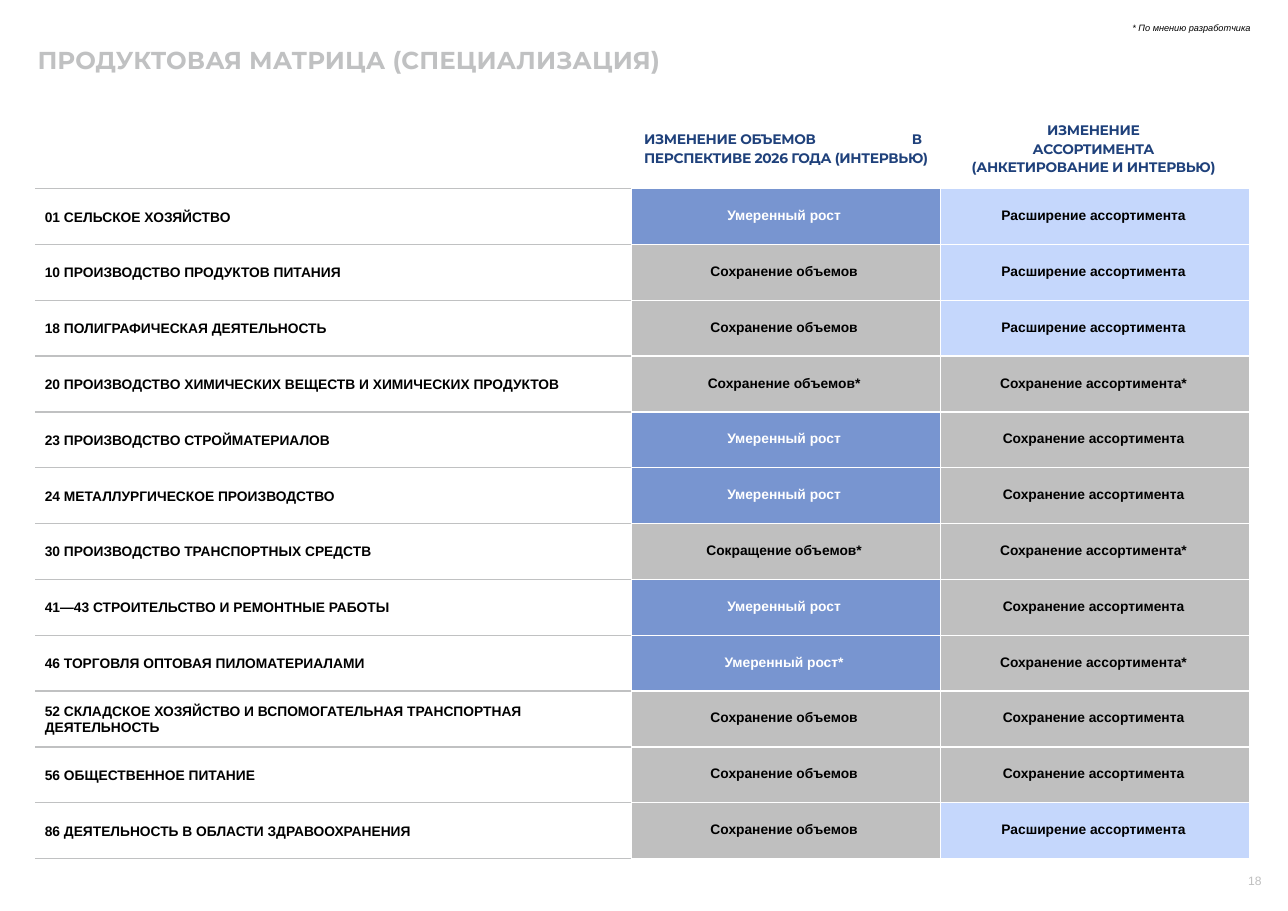
from lxml.etree import SubElement
from pptx import Presentation
from pptx.dml.color import RGBColor
from pptx.enum.text import MSO_ANCHOR, MSO_AUTO_SIZE, PP_ALIGN
from pptx.oxml.ns import qn
from pptx.util import Pt

TITLE = "ПРОДУКТОВАЯ МАТРИЦА (СПЕЦИАЛИЗАЦИЯ)"
FOOTNOTE = "* По мнению разработчика"
PAGE_NUMBER = "18"
VOLUME_HEADER = ["ИЗМЕНЕНИЕ ОБЪЕМОВ\tВ ПЕРСПЕКТИВЕ 2026 ГОДА (ИНТЕРВЬЮ)"]
RANGE_HEADER = ["ИЗМЕНЕНИЕ", "АССОРТИМЕНТА", "(АНКЕТИРОВАНИЕ И ИНТЕРВЬЮ)"]

GROWTH = "Умеренный рост"
STABLE = "Сохранение объемов"
DECLINE = "Сокращение объемов"
WIDER = "Расширение ассортимента"
SAME = "Сохранение ассортимента"
INDUSTRIES = [
    ("01 СЕЛЬСКОЕ ХОЗЯЙСТВО", GROWTH, WIDER, ""),
    ("10 ПРОИЗВОДСТВО ПРОДУКТОВ ПИТАНИЯ", STABLE, WIDER, ""),
    ("18 ПОЛИГРАФИЧЕСКАЯ ДЕЯТЕЛЬНОСТЬ", STABLE, WIDER, ""),
    ("20 ПРОИЗВОДСТВО ХИМИЧЕСКИХ ВЕЩЕСТВ И ХИМИЧЕСКИХ ПРОДУКТОВ", STABLE, SAME, "*"),
    ("23 ПРОИЗВОДСТВО СТРОЙМАТЕРИАЛОВ", GROWTH, SAME, ""),
    ("24 МЕТАЛЛУРГИЧЕСКОЕ ПРОИЗВОДСТВО", GROWTH, SAME, ""),
    ("30 ПРОИЗВОДСТВО ТРАНСПОРТНЫХ СРЕДСТВ", DECLINE, SAME, "*"),
    ("41—43 СТРОИТЕЛЬСТВО И РЕМОНТНЫЕ РАБОТЫ", GROWTH, SAME, ""),
    ("46 ТОРГОВЛЯ ОПТОВАЯ ПИЛОМАТЕРИАЛАМИ", GROWTH, SAME, "*"),
    ("52 СКЛАДСКОЕ ХОЗЯЙСТВО И ВСПОМОГАТЕЛЬНАЯ ТРАНСПОРТНАЯ ДЕЯТЕЛЬНОСТЬ", STABLE, SAME, ""),
    ("56 ОБЩЕСТВЕННОЕ ПИТАНИЕ", STABLE, SAME, ""),
    ("86 ДЕЯТЕЛЬНОСТЬ В ОБЛАСТИ ЗДРАВООХРАНЕНИЯ", STABLE, WIDER, ""),
]

COLORS = {
    "white": "FFFFFF", "black": "000000", "navy": "1F417B", "rule": "C0C1C2",
    "gray": "BFBFBF", "blue": "7895D0", "pale": "C5D7FC",
}
STATUS_FILLS = {GROWTH: "blue", WIDER: "pale"}
COLUMN_WIDTHS = (389, 202.2, 202.2)
HEADER_HEIGHT, ROW_HEIGHT = 47, 36.5
TABLE_LEFT, TABLE_TOP = 23.5, 76.3

TITLE_FONT = {"name": "Montserrat", "size": Pt(16), "bold": True, "italic": False}
NOTE_FONT = {"name": "Arial", "size": Pt(6), "bold": False, "italic": True}
NUMBER_FONT = {"name": "Arial", "size": Pt(7.9), "bold": False, "italic": False}
HEADER_FONT = {"name": "Montserrat", "size": Pt(9), "bold": True, "italic": False}
BODY_FONT = {"name": "Arial", "size": Pt(9), "bold": True, "italic": False}
HEADER_INSETS = (0, 0, 2.5, 5.8)
VOLUME_INSETS = (8.4, 0, 0, 5.8)
LABEL_INSETS = (5.8, 0, 0, 0)
STATUS_INSETS = (0, 0, 2.5, 0)


def apply(target, values):
    for key, value in values.items():
        setattr(target, key, value)


def set_insets(target, insets):
    for side, inset in zip(("left", "top", "right", "bottom"), insets):
        setattr(target, f"margin_{side}", Pt(inset))


def write(frame, lines, font, color, align, leading=None, tracking=0):
    for index, line in enumerate(lines):
        paragraph = frame.add_paragraph() if index else frame.paragraphs[0]
        paragraph.alignment = align
        if leading:
            paragraph.line_spacing = Pt(leading)
        run = paragraph.add_run()
        run.text = line
        apply(run.font, font)
        run.font.color.rgb = RGBColor.from_string(COLORS[color])
        if tracking:
            run.font._element.set("spc", str(tracking))


def set_box(shape, box, insets):
    apply(shape, dict(zip(("left", "top", "width", "height"), map(Pt, box))))
    apply(shape.text_frame, {"word_wrap": True, "auto_size": MSO_AUTO_SIZE.NONE,
                             "vertical_anchor": MSO_ANCHOR.TOP})
    set_insets(shape.text_frame, insets)
    return shape.text_frame


def set_cell(cell, fill, edges, insets):
    cell.vertical_anchor = MSO_ANCHOR.MIDDLE
    set_insets(cell, insets)
    properties = cell._tc.get_or_add_tcPr()
    for tag, edge in zip(("lnL", "lnR", "lnT", "lnB"), edges):
        line = SubElement(properties, qn(f"a:{tag}"), w=str(Pt(1)))
        solid = SubElement(line, qn("a:solidFill"))
        SubElement(solid, qn("a:srgbClr"), val=COLORS[edge])
    cell.fill.solid()
    cell.fill.fore_color.rgb = RGBColor.from_string(COLORS[fill])


def add_matrix(slide):
    table = slide.shapes.add_table(
        len(INDUSTRIES) + 1, len(COLUMN_WIDTHS), Pt(TABLE_LEFT), Pt(TABLE_TOP),
        Pt(sum(COLUMN_WIDTHS)), Pt(HEADER_HEIGHT + ROW_HEIGHT * len(INDUSTRIES))).table
    apply(table, {"first_row": False, "horz_banding": False})
    for column, width in zip(table.columns, COLUMN_WIDTHS):
        column.width = Pt(width)
    for index, row in enumerate(table.rows):
        row.height = Pt(ROW_HEIGHT if index else HEADER_HEIGHT)

    plain = ("white",) * 4
    set_cell(table.cell(0, 0), "white", ("white", "white", "white", "rule"), HEADER_INSETS)
    headers = ((VOLUME_HEADER, PP_ALIGN.LEFT, VOLUME_INSETS),
               (RANGE_HEADER, PP_ALIGN.CENTER, HEADER_INSETS))
    for column, (lines, align, insets) in enumerate(headers, 1):
        cell = table.cell(0, column)
        set_cell(cell, "white", plain, insets)
        write(cell.text_frame, lines, HEADER_FONT, "navy", align, 12, -20)
    volume = table.cell(0, 1).text_frame.paragraphs[0]
    tabs = SubElement(volume._p.get_or_add_pPr(), qn("a:tabLst"))
    SubElement(tabs, qn("a:tab"), pos=str(Pt(175)), algn="l")

    for row, (industry, *statuses, mark) in enumerate(INDUSTRIES, 1):
        label = table.cell(row, 0)
        set_cell(label, "white", ("white", "white", "rule", "rule"), LABEL_INSETS)
        write(label.text_frame, [industry], BODY_FONT, "black", PP_ALIGN.LEFT, 11)
        for column, status in enumerate(statuses, 1):
            cell = table.cell(row, column)
            set_cell(cell, STATUS_FILLS.get(status, "gray"), plain, STATUS_INSETS)
            color = "white" if status == GROWTH else "black"
            write(cell.text_frame, [status + mark], BODY_FONT, color, PP_ALIGN.CENTER, 9)


def main():
    deck = Presentation()
    apply(deck, {"slide_width": Pt(841.7), "slide_height": Pt(595.4)})
    slide = deck.slides.add_slide(deck.slide_layouts[5])

    heading = set_box(slide.shapes.title, (23.8, 25.9, 798.5, 26.6), (0.7, 3.6, 7.2, 3.6))
    write(heading, [TITLE], TITLE_FONT, "rule", PP_ALIGN.LEFT, tracking=10)
    heading.paragraphs[0].space_before = Pt(1)

    for text, font, color, align, box, insets in (
        (FOOTNOTE, NOTE_FONT, "black", PP_ALIGN.RIGHT, (629.3, 14.4, 187.9, 14.4), (0, 0, 0, 0)),
        (PAGE_NUMBER, NUMBER_FONT, "gray", PP_ALIGN.LEFT, (808.6, 567.4, 32.4, 19.4),
         (7.2, 3.6, 7.2, 3.6)),
    ):
        frame = set_box(slide.shapes.add_textbox(*map(Pt, box)), box, insets)
        write(frame, [text], font, color, align)

    add_matrix(slide)
    deck.save("out.pptx")


if __name__ == "__main__":
    main()
